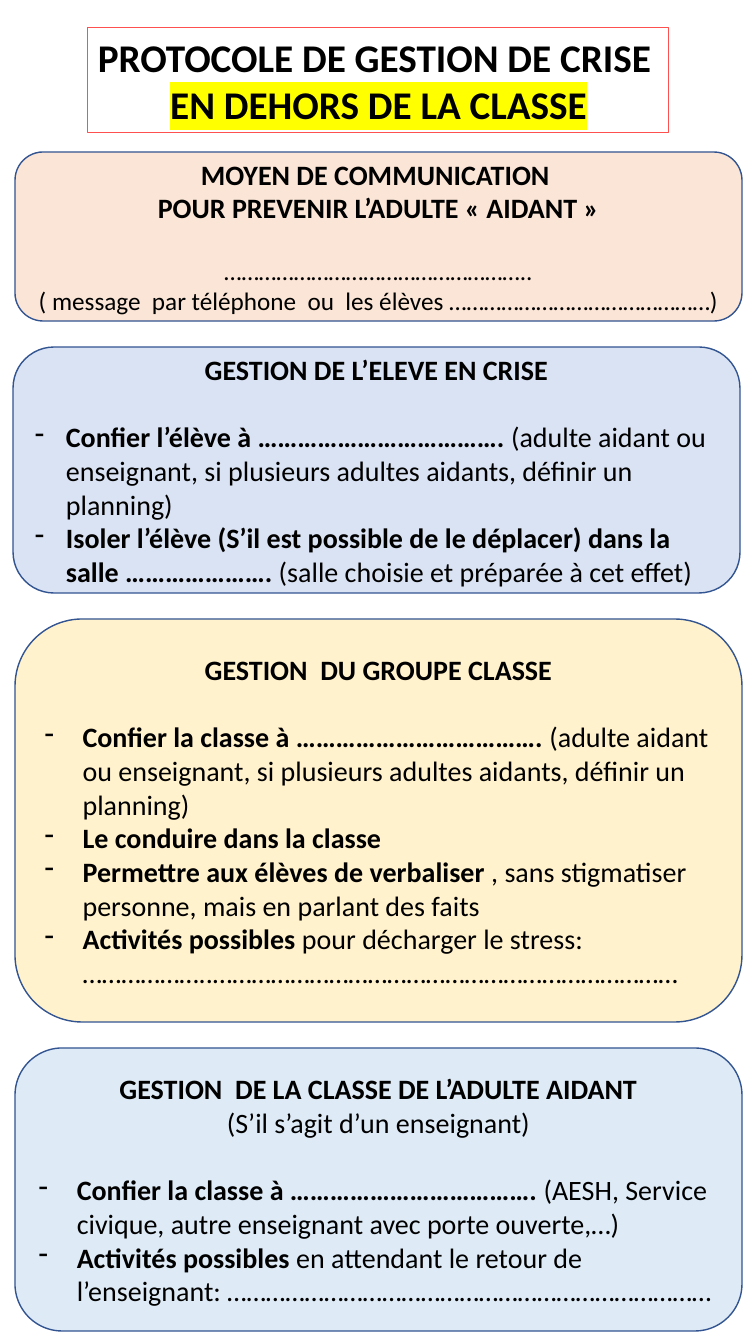
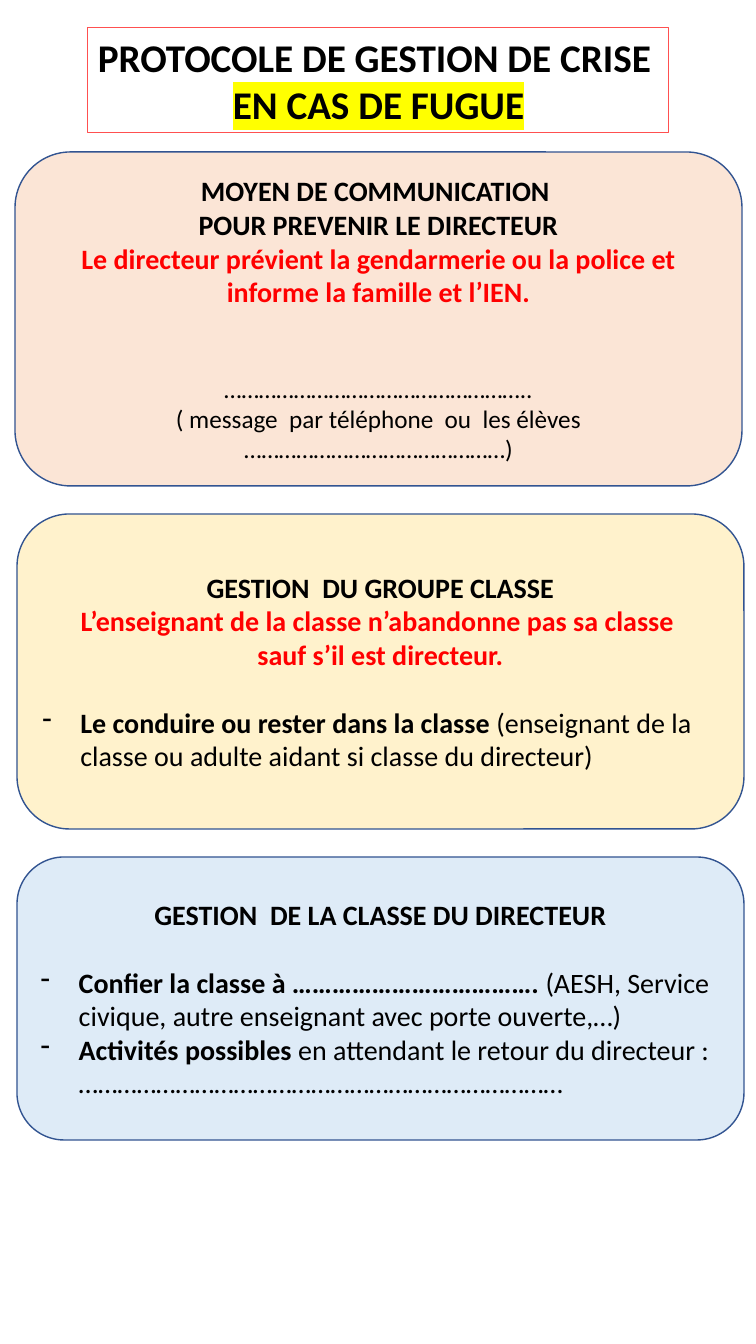
"""Build two crisis-protocol posters: outside the classroom and runaway pupil."""
from lxml.etree import SubElement
from pptx import Presentation
from pptx.dml.color import RGBColor
from pptx.enum.shapes import MSO_SHAPE as Shape
from pptx.enum.text import MSO_ANCHOR as Anchor, MSO_AUTO_SIZE as AutoSize, PP_ALIGN as Align
from pptx.oxml.ns import qn
from pptx.util import Emu, Pt

COLORS = {
    "ink": "000000", "alert": "FF0000", "marker": "FFFF00",
    "title_line": "FF5050", "panel_line": "325491",
    "peach": "FBE5D6", "blue": "DAE3F3", "cream": "FFF2CC", "sky": "DEEBF7",
}
FONT = "Calibri"
STYLES = {
    "title": (28, True, "ink"),
    "marked": (28, True, "ink"),
    "bold": (20, True, "ink"),
    "plain": (20, False, "ink"),
    "alert": (20, True, "alert"),
    "small": (18, False, "ink"),
}
LINE_20, LINE_18 = 24.4, 22

PX_PER_INCH = 100.8
SLIDE_SIZE = (756, 1344)
TITLE_BOX = (88, 28, 581, 105)
PANEL_TOP, PANEL_WIDTH = 152, 727


def centered(text, style="bold", before=0):
    return "center", before, [(text, style)]


def item(lead, detail="", before=0):
    return "item", before, [(lead, "bold"), (detail, "plain")]


MEANS = centered("MOYEN DE COMMUNICATION ")
GROUP = centered("GESTION  DU GROUPE CLASSE")
MESSAGE = centered("( message  par téléphone  ou  les élèves ………………………………………)", "small")
DOTS = "…………………………………………….."
ENTRUST = "Confier la classe à ………………………………. "
HELPERS = "(adulte aidant ou enseignant, si plusieurs adultes aidants, définir un planning)"
RELIEF = item(ENTRUST, "(AESH, Service civique, autre enseignant avec porte ouverte,…)", LINE_20)
ACTIVITIES = "Activités possibles "

POSTERS = [
    {"subject": "EN DEHORS DE LA CLASSE", "gap": 26, "panels": [
        {"left": 15, "height": 169, "fill": "peach", "text": [
            MEANS,
            centered("POUR PREVENIR L’ADULTE « AIDANT »"),
            centered(DOTS, "small", LINE_18),
            MESSAGE]},
        {"left": 13, "height": 246, "fill": "blue", "indent": 31, "text": [
            centered("GESTION DE L’ELEVE EN CRISE"),
            item("Confier l’élève à ………………………………. ", HELPERS, LINE_20),
            item("Isoler l’élève (S’il est possible de le déplacer) dans la salle …………………. ",
                 "(salle choisie et préparée à cet effet)")]},
        {"left": 15, "height": 403, "fill": "cream", "text": [
            GROUP,
            item(ENTRUST, HELPERS, LINE_20),
            item("Le conduire dans la classe"),
            item("Permettre aux élèves de verbaliser ",
                 ", sans stigmatiser personne, mais en parlant des faits"),
            item(ACTIVITIES, "pour décharger le stress: "
                 "………………..………………………………………………………………")]},
        {"left": 15, "height": 283, "fill": "sky", "text": [
            centered("GESTION  DE LA CLASSE DE L’ADULTE AIDANT"),
            centered("(S’il s’agit d’un enseignant)", "plain"),
            RELIEF,
            item(ACTIVITIES, "en attendant le retour de l’enseignant: "
                 "…………………………………………………………………")]},
    ]},
    {"subject": "EN CAS DE FUGUE", "gap": 28, "panels": [
        {"left": 15, "height": 334, "fill": "peach", "text": [
            MEANS,
            centered("POUR PREVENIR LE DIRECTEUR"),
            centered("Le directeur prévient la gendarmerie ou la police et "
                     "informe la famille et l’IEN.", "alert"),
            centered(DOTS, "small", LINE_20 + LINE_18),
            MESSAGE]},
        {"left": 17, "height": 315, "fill": "cream", "text": [
            GROUP,
            centered("L’enseignant de la classe n’abandonne pas sa classe ", "alert"),
            centered("sauf s’il est directeur.", "alert"),
            item("Le conduire ou rester dans la classe ",
                 "(enseignant de la classe ou adulte aidant si classe du directeur)", LINE_20)]},
        {"left": 17, "height": 283, "fill": "sky", "text": [
            centered("GESTION  DE LA CLASSE DU DIRECTEUR"),
            RELIEF,
            item(ACTIVITIES, "en attendant le retour du directeur : "
                 "…………………………………………………………………")]},
    ]},
]


def px(value):
    return Emu(round(value * 914400 / PX_PER_INCH))


def color(name):
    return RGBColor.from_string(COLORS[name])


def add_run(paragraph, text, style):
    size, bold, ink = STYLES[style]
    run = paragraph.add_run()
    run.text = text
    font = run.font
    font.size, font.bold, font.name = Pt(size), bold, FONT
    font.color.rgb = color(ink)
    if style == "marked":
        properties = font._element
        highlight = SubElement(properties, qn("a:highlight"))
        SubElement(highlight, qn("a:srgbClr"), val=COLORS["marker"])
        properties.find(qn("a:solidFill")).addnext(highlight)


def add_dash(paragraph, indent):
    properties = paragraph._p.get_or_add_pPr()
    properties.set("marL", str(px(indent)))
    properties.set("indent", str(-px(indent)))
    SubElement(properties, qn("a:buFontTx"))
    SubElement(properties, qn("a:buChar"), char="-")


def write(frame, paragraphs, indent):
    frame.word_wrap = True
    for index, (layout, before, runs) in enumerate(paragraphs):
        paragraph = frame.add_paragraph() if index else frame.paragraphs[0]
        paragraph.alignment = Align.CENTER if layout == "center" else Align.LEFT
        if before:
            paragraph.space_before = Pt(before)
        if layout == "item":
            add_dash(paragraph, indent)
        for text, style in runs:
            if text:
                add_run(paragraph, text, style)


def add_box(slide, preset, box, fill, line, width, paragraphs, indent=38):
    shape = slide.shapes.add_shape(preset, *map(px, box))
    shape.shadow.inherit = False
    if fill:
        shape.fill.solid()
        shape.fill.fore_color.rgb = color(fill)
    else:
        shape.fill.background()
    shape.line.color.rgb = color(line)
    shape.line.width = Pt(width)
    write(shape.text_frame, paragraphs, indent)
    return shape.text_frame


def add_title(slide, subject):
    frame = add_box(slide, Shape.RECTANGLE, TITLE_BOX, None, "title_line", 0.75, [
        ("left", 0, [("PROTOCOLE DE GESTION DE CRISE", "title")]),
        centered(subject, "marked")])
    frame.vertical_anchor = Anchor.TOP
    frame.auto_size = AutoSize.SHAPE_TO_FIT_TEXT


def add_poster(deck, poster):
    slide = deck.slides.add_slide(deck.slide_layouts[6])
    add_title(slide, poster["subject"])
    top = PANEL_TOP
    for panel in poster["panels"]:
        box = (panel["left"], top, PANEL_WIDTH, panel["height"])
        frame = add_box(slide, Shape.ROUNDED_RECTANGLE, box, panel["fill"],
                        "panel_line", 1, panel["text"], panel.get("indent", 38))
        frame.vertical_anchor = Anchor.MIDDLE
        top += panel["height"] + poster["gap"]


def main():
    deck = Presentation()
    deck.slide_width, deck.slide_height = map(px, SLIDE_SIZE)
    for poster in POSTERS:
        add_poster(deck, poster)
    deck.save("out.pptx")


if __name__ == "__main__":
    main()
